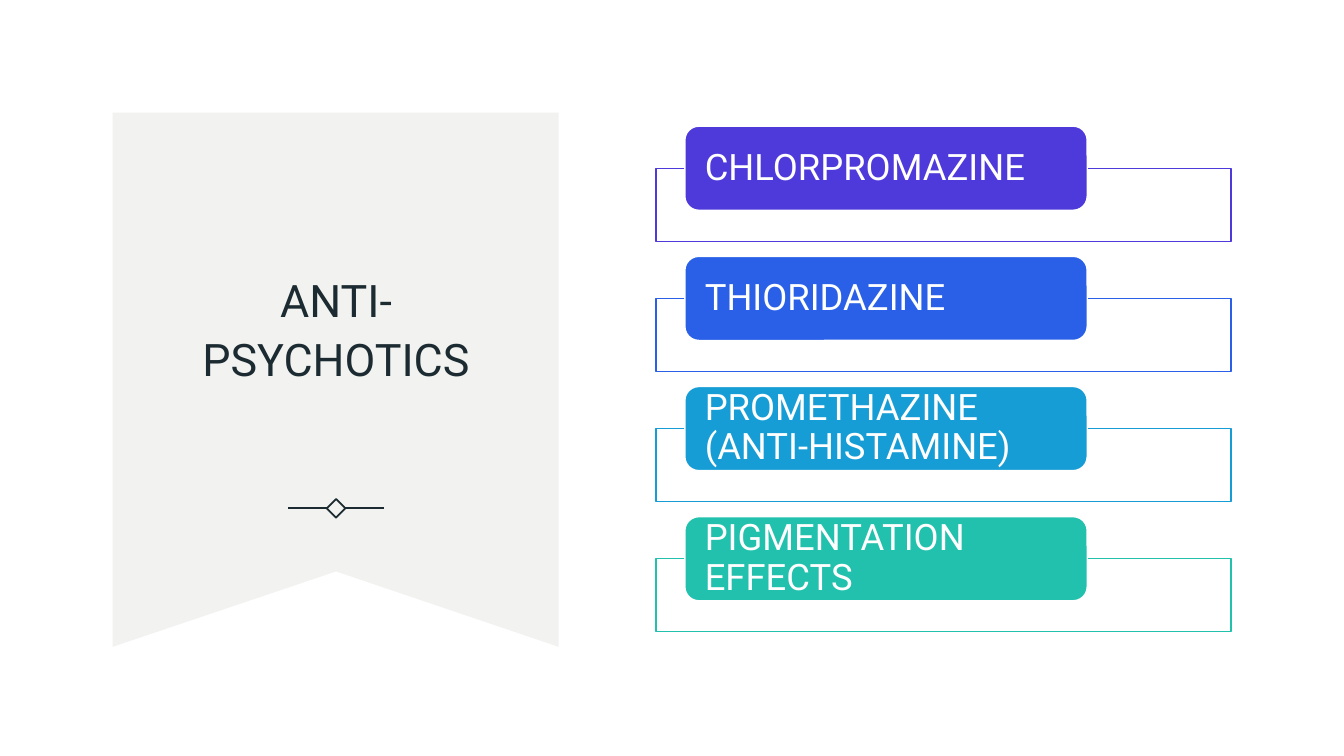
import pptx
import pptx.dml.color
import pptx.enum.shapes
import pptx.enum.text
import pptx.oxml
import pptx.oxml.ns
import pptx.util

Cm = pptx.util.Cm
Pt = pptx.util.Pt
KIND = pptx.enum.shapes.MSO_SHAPE
ALIGN = pptx.enum.text.PP_ALIGN
MIDDLE = pptx.enum.text.MSO_ANCHOR.MIDDLE

INK = "1C2B31"
WHITE = "FFFFFF"
MID = 8.47
DRUGS = [
    ("CHLORPROMAZINE", "4E39DB"),
    ("THIORIDAZINE", "2960E7"),
    ("PROMETHAZINE (ANTI-HISTAMINE)", "179DD5"),
    ("PIGMENTATION EFFECTS", "22C1AE"),
]


def color(code):
    """Turn a hex string into a colour."""
    return pptx.dml.color.RGBColor.from_string(code)


def paint(shape, fill=None, line=None, weight=1):
    """Set the fill and outline of a shape, and drop its shadow."""
    shape.shadow.inherit = False
    if fill:
        shape.fill.solid()
        shape.fill.fore_color.rgb = color(fill)
    else:
        shape.fill.background()
    if line:
        shape.line.color.rgb = color(line)
        shape.line.width = Pt(weight)
    else:
        shape.line.fill.background()


def add_box(slide, kind, left, top, width, height, **look):
    """Add a painted preset shape."""
    box = slide.shapes.add_shape(kind, Cm(left), Cm(top), Cm(width), Cm(height))
    paint(box, **look)
    return box


def write(shape, text, size, code, align, space, inset):
    """Put one middle-anchored paragraph in a shape."""
    frame = shape.text_frame
    frame.text = text
    frame.word_wrap = True
    frame.auto_size = pptx.enum.text.MSO_AUTO_SIZE.NONE
    frame.vertical_anchor = MIDDLE
    frame.margin_left = frame.margin_right = Cm(inset)
    frame.margin_top = frame.margin_bottom = Cm(0.13)
    para = frame.paragraphs[0]
    para.alignment = align
    para.line_spacing = space
    para.font.name = "Roboto"
    para.font.size = Pt(size)
    para.font.color.rgb = color(code)


def add_line(slide, start, end, y):
    """Add a level line without shadow."""
    line = slide.shapes.add_connector(
        pptx.enum.shapes.MSO_CONNECTOR.STRAIGHT, Cm(start), Cm(y), Cm(end), Cm(y))
    line.line.color.rgb = color(INK)
    line.line.width = Pt(1.25)
    props = line.element.find(pptx.oxml.ns.qn("p:spPr"))
    props.append(pptx.oxml.parse_xml(
        "<a:effectLst %s/>" % pptx.oxml.ns.nsdecls("a")))


def add_flag(slide):
    """Add the notched banner with the title on top."""
    left, top, right, foot, notch = 2.84, 2.84, 14.08, 16.3, 14.4
    pen = slide.shapes.build_freeform(Cm(left), Cm(top))
    pen.add_line_segments([
        (Cm(right), Cm(top)), (Cm(right), Cm(foot)),
        (Cm(MID), Cm(notch)), (Cm(left), Cm(foot))])
    flag = pen.convert_to_shape()
    paint(flag, fill="F2F3F0")
    title = slide.shapes.title
    title.left, title.top = Cm(3.96), Cm(4.6)
    title.width, title.height = Cm(9.02), Cm(7.24)
    write(title, "ANTI-PSYCHOTICS", 32, INK, ALIGN.CENTER, 1.1, 0.25)
    flag.element.addnext(title.element)


def add_mark(slide):
    """Add the diamond between two short lines."""
    y, size = 12.81, 0.47
    add_box(slide, KIND.DIAMOND, MID - size / 2, y - size / 2, size, size,
            line=INK, weight=1.25)
    for start, end in ((-1.21, -0.23), (0.23, 1.21)):
        add_line(slide, MID + start, MID + end, y)


def add_drug(slide, top, text, code):
    """Add an outlined frame with a filled label over it."""
    add_box(slide, KIND.RECTANGLE, 16.53, top + 1.06, 14.49, 1.84,
            fill=WHITE, line=code)
    label = add_box(slide, KIND.ROUNDED_RECTANGLE, 17.26, top, 10.14, 2.12,
                    fill=code, line=WHITE)
    write(label, text, 26, WHITE, ALIGN.LEFT, 0.9, 0.4)


def main():
    """Build and save the slide."""
    deck = pptx.Presentation()
    deck.slide_width, deck.slide_height = Cm(33.87), Cm(19.05)
    slide = deck.slides.add_slide(deck.slide_layouts.get_by_name("Title Only"))
    add_flag(slide)
    add_mark(slide)
    for row, (text, code) in enumerate(DRUGS):
        add_drug(slide, 3.18 + 3.28 * row, text, code)
    deck.save("out.pptx")


if __name__ == "__main__":
    main()
